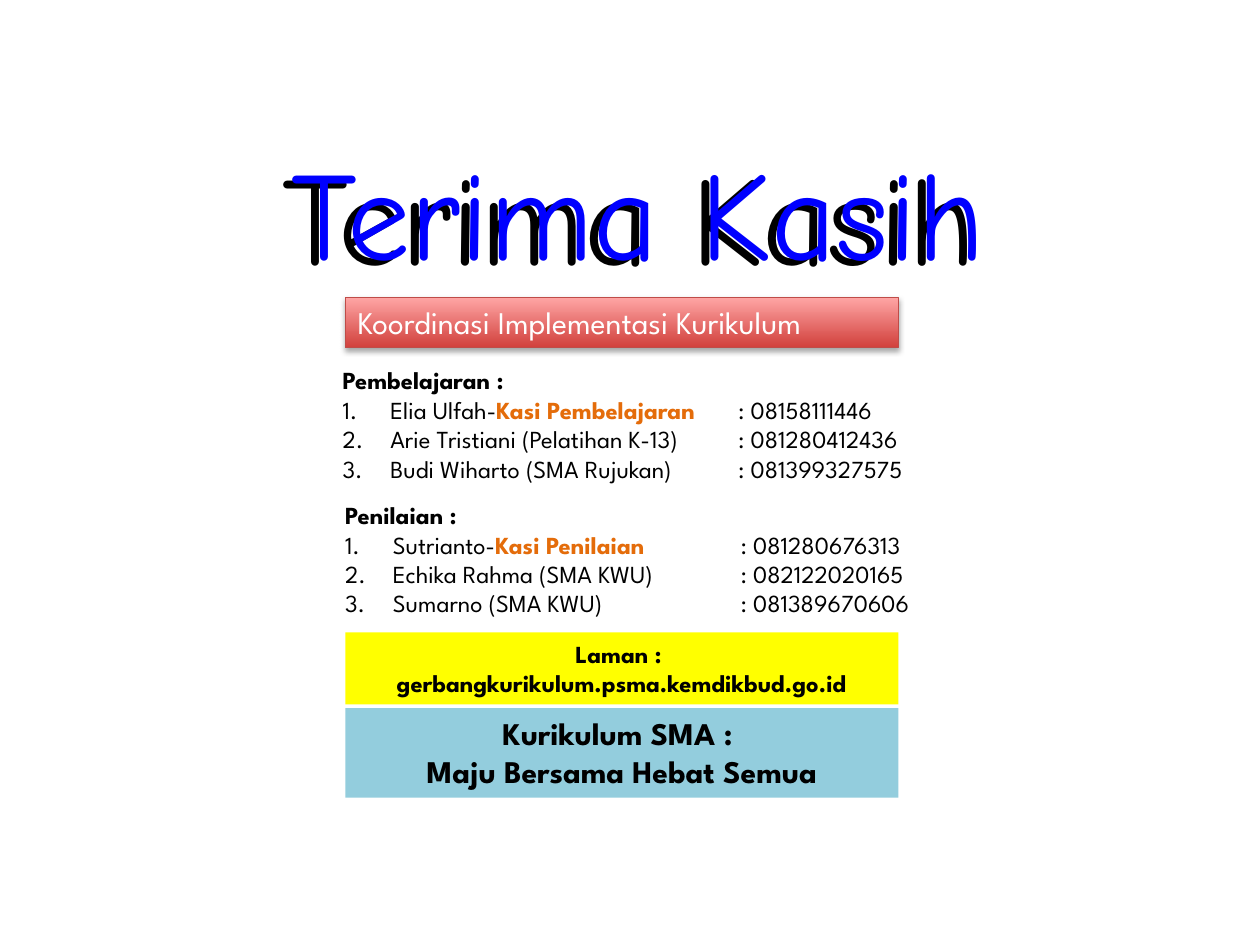
from lxml.etree import SubElement
from pptx import Presentation
from pptx.dml.color import RGBColor
from pptx.enum.shapes import MSO_SHAPE as Shape
from pptx.enum.text import MSO_ANCHOR as Anchor, MSO_AUTO_SIZE as AutoSize, PP_ALIGN as Align
from pptx.oxml.ns import qn
from pptx.util import Inches, Pt

# Content
BODY_FONT, TITLE_FONT = "League Spartan", "Comic Neue"
BLACK, WHITE, ORANGE = "000000", "FFFFFF", "E46C0A"
TITLE = "Terima Kasih"
TITLE_LAYERS = [(2.13, 1.06, BLACK), (2.2, 1.02, "0000FF")]
HEADING = "Koordinasi Implementasi Kurikulum"
# left, top, width, height, label, (name, role, phone)
CONTACTS = [
    (2.62, 2.85, 4.92, 1.04, "Pembelajaran :", [
        ("Elia Ulfah-", "Kasi Pembelajaran", "08158111446"),
        ("Arie Tristiani (Pelatihan K-13)", "", "081280412436"),
        ("Budi Wiharto (SMA Rujukan)", "", "081399327575")]),
    (2.64, 3.92, 4.9, 1.28, "Penilaian :", [
        ("Sutrianto-", "Kasi Penilaian", "081280676313"),
        ("Echika Rahma (SMA KWU)", "", "082122020165"),
        ("Sumarno (SMA KWU)", "", "081389670606")]),
]
# top, height, fill, size, lines
BANNERS = [
    (5.02, 0.57, "FFFF00", 14, ["Laman : ", "gerbangkurikulum.psma.kemdikbud.go.id"]),
    (5.62, 0.71, "93CDDD", 18, ["Kurikulum SMA : ", "Maju Bersama Hebat Semua"]),
]
BAND_LEFT, BAND_WIDTH = 2.74, 4.39
INDENT, TABS = 0.38, (0.39, 3.14)


def rgb(value):
    return RGBColor.from_string(value)


def set_font(para, size, color, name=BODY_FONT, bold=False):
    font = para.font
    font.size, font.name, font.bold = Pt(size), name, bold
    font.color.rgb = rgb(color)


def set_frame(shape, wrap=True):
    frame = shape.text_frame
    frame.word_wrap = wrap
    frame.vertical_anchor = Anchor.TOP
    frame.auto_size = AutoSize.SHAPE_TO_FIT_TEXT
    return frame


def add_text(left, top, width, height, wrap=True):
    box = page.shapes.add_textbox(*map(Inches, (left, top, width, height)))
    return set_frame(box, wrap)


def add_band(top, height):
    band = page.shapes.add_shape(
        Shape.RECTANGLE, *map(Inches, (BAND_LEFT, top, BAND_WIDTH, height)))
    band.shadow.inherit = False
    return band


def add_shadow(shape):
    effects = shape._element.spPr.find(qn("a:effectLst"))
    shadow = SubElement(effects, qn("a:outerShdw"), blurRad=str(Pt(3.1)),
                        dist=str(Pt(1.8)), dir="5400000", rotWithShape="0")
    color = SubElement(shadow, qn("a:srgbClr"), val=BLACK)
    SubElement(color, qn("a:alpha"), val="35000")


def number_item(para):
    props = para._p.get_or_add_pPr()
    props.set("marL", str(Inches(INDENT)))
    props.set("indent", str(-Inches(INDENT)))
    SubElement(props, qn("a:buFont"), typeface="+mj-lt")
    SubElement(props, qn("a:buAutoNum"), type="arabicPeriod")
    tabs = SubElement(props, qn("a:tabLst"))
    for stop in TABS:
        SubElement(tabs, qn("a:tab"), pos=str(Inches(stop)), algn="l")


deck = Presentation()
deck.slide_width, deck.slide_height = Inches(10), Inches(7.5)
page = deck.slides.add_slide(deck.slide_layouts[6])

# Title with an offset black layer behind it
for left, top, color in TITLE_LAYERS:
    para = add_text(left, top, 5.73, 1.31, wrap=False).paragraphs[0]
    para.text, para.alignment = TITLE, Align.CENTER
    set_font(para, 72, color, TITLE_FONT)

# Red heading
heading = add_band(2.36, 0.4)
heading.fill.gradient()
heading.fill.gradient_angle = 90
for stop, color in zip(heading.fill.gradient_stops, ("D1403C", "FFA6A5")):
    stop.color.rgb = rgb(color)
heading.fill.gradient_stops[0].position = 0
heading.fill.gradient_stops[1].position = 1
heading.line.color.rgb = rgb("BF4C48")
heading.line.width = Pt(0.75)
add_shadow(heading)
para = set_frame(heading).paragraphs[0]
para.text, para.alignment = HEADING, Align.LEFT
set_font(para, 18, WHITE)

# Contact lists
for left, top, width, height, label, people in CONTACTS:
    frame = add_text(left, top, width, height)
    frame.paragraphs[0].text = label
    set_font(frame.paragraphs[0], 14, BLACK, bold=True)
    for name, role, phone in people:
        para = frame.add_paragraph()
        number_item(para)
        set_font(para, 14, BLACK)
        para.add_run().text = name
        if role:
            span = para.add_run()
            span.text = role
            span.font.bold = True
            span.font.color.rgb = rgb(ORANGE)
        para.add_run().text = f"\t: {phone}"

# Closing banners
for top, height, color, size, lines in BANNERS:
    banner = add_band(top, height)
    banner.fill.solid()
    banner.fill.fore_color.rgb = rgb(color)
    banner.line.fill.background()
    frame = set_frame(banner)
    for index, line in enumerate(lines):
        para = frame.add_paragraph() if index else frame.paragraphs[0]
        para.text, para.alignment = line, Align.CENTER
        set_font(para, size, BLACK, bold=True)

deck.save("out.pptx")
